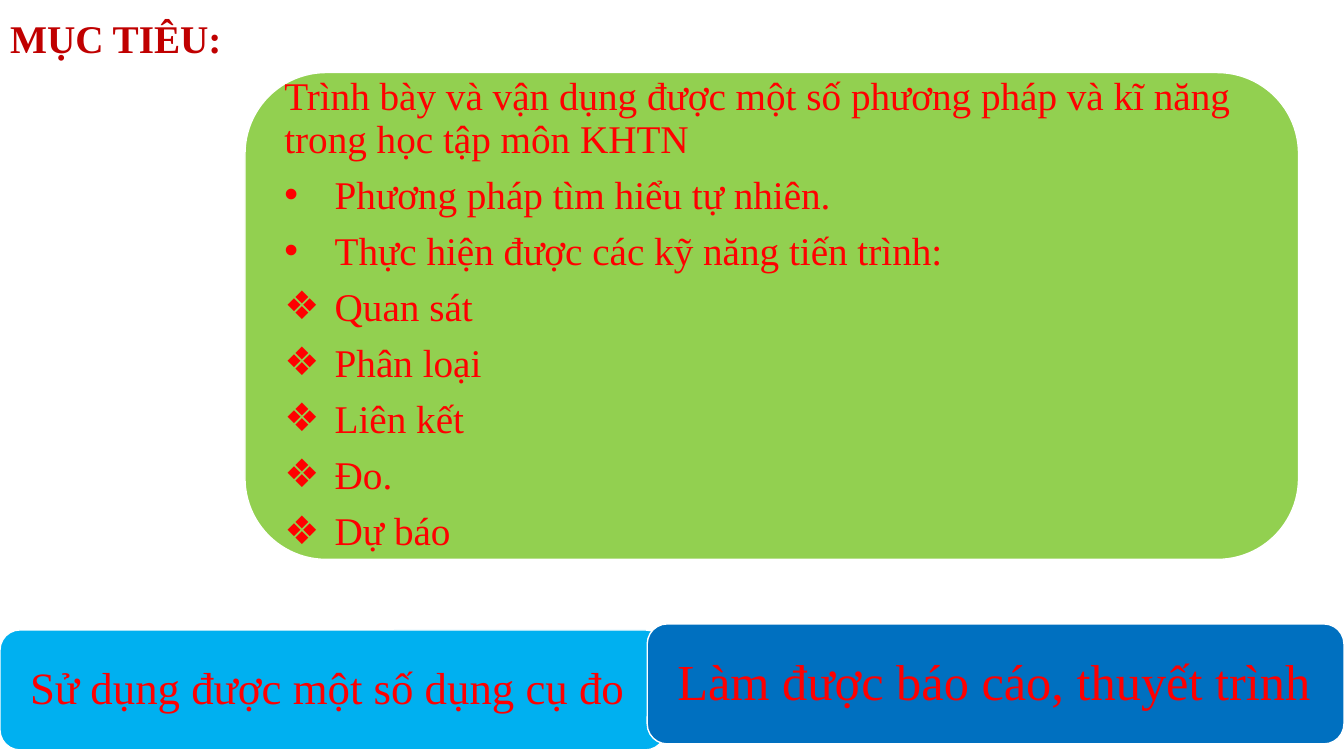
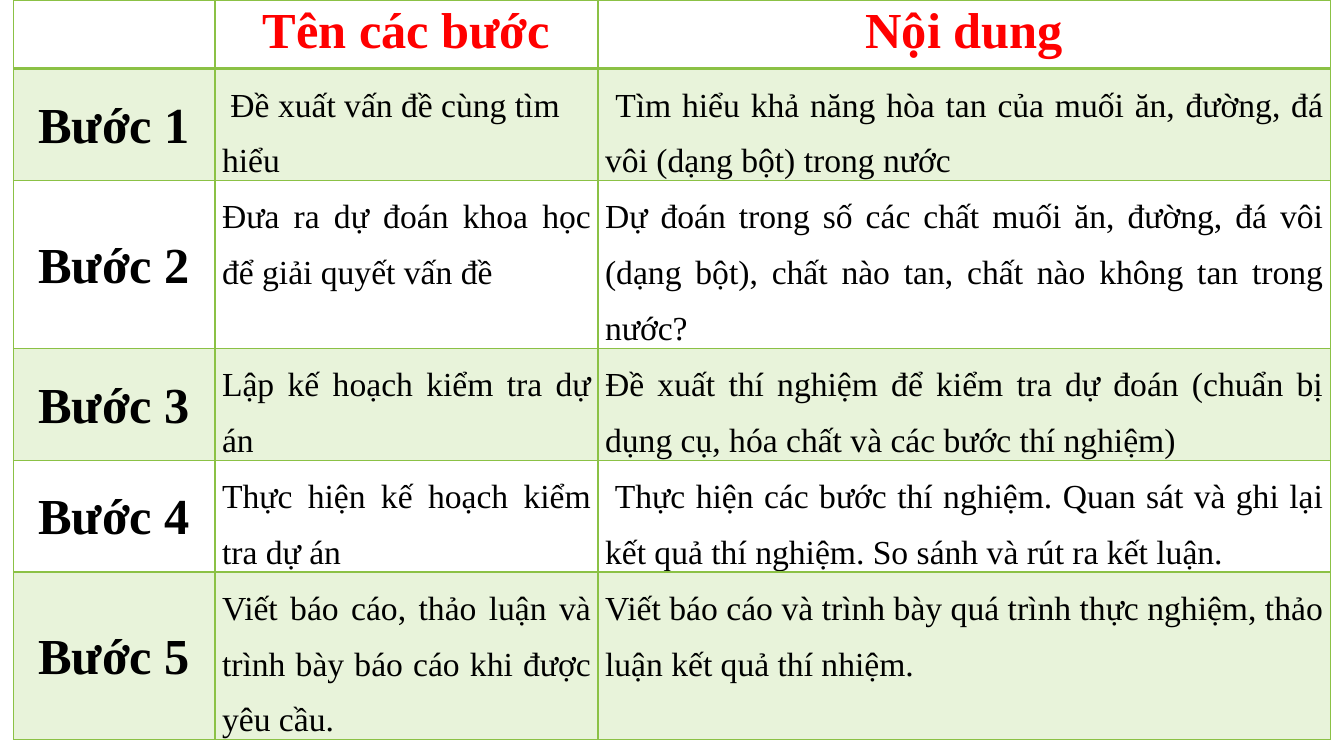
from dataclasses import dataclass

from lxml.etree import SubElement
from pptx import Presentation
from pptx.dml.color import RGBColor
from pptx.enum.shapes import MSO_SHAPE as Shape
from pptx.enum.text import MSO_ANCHOR as Anchor, MSO_AUTO_SIZE as AutoSize, PP_ALIGN as Align
from pptx.oxml.ns import qn
from pptx.util import Inches, Pt


@dataclass(frozen=True)
class Theme:
    font: str = "Times New Roman"
    white: str = "FFFFFF"
    black: str = "000000"
    heading: str = "C00000"
    accent: str = "FF0000"
    panel: str = "92D050"
    sky: str = "00B0F0"
    blue: str = "0070C0"
    rule: str = "8BC145"
    stripe: str = "E8F3DA"
    body_size: int = 28
    band_size: int = 32
    large_size: int = 36
    cell_size: int = 24


THEME = Theme()
TITLE_AND_BODY, BLANK = 1, 6
LIST_INDENT = Inches(0.5)


def set_bullet(para, mark):
    """Give a paragraph a hanging bullet, or none at all."""
    props = para._p.get_or_add_pPr()
    indent = LIST_INDENT if mark else 0
    props.set("marL", str(indent))
    props.set("indent", str(-indent))
    if mark:
        SubElement(props, qn("a:buFont"), typeface="Arial")
        SubElement(props, qn("a:buChar"), char=mark)
    else:
        SubElement(props, qn("a:buNone"))


def write_text(frame, lines, size, color, bold=False, align=Align.LEFT, spacing=1.0, after=0):
    """Fill a text frame with (bullet, text) lines of one format."""
    for index, (mark, text) in enumerate(lines):
        para = frame.add_paragraph() if index else frame.paragraphs[0]
        para.alignment, para.line_spacing = align, spacing
        para.space_before, para.space_after = Pt(0), Pt(after)
        set_bullet(para, mark)
        span = para.add_run()
        span.text = text
        font = span.font
        font.name, font.size, font.bold = THEME.font, Pt(size), bold
        font.color.rgb = RGBColor.from_string(color)


def set_frame(frame, anchor, side, edge):
    """Set the wrap, anchor and insets (inches) of a text frame."""
    frame.word_wrap, frame.auto_size = True, AutoSize.NONE
    frame.vertical_anchor = anchor
    frame.margin_left = frame.margin_right = Inches(side)
    frame.margin_top = frame.margin_bottom = Inches(edge)


def set_borders(cell, color, bottom):
    """Draw four cell borders, with a bottom line of its own width."""
    props = cell._tc.get_or_add_tcPr()
    widths = {"a:lnL": 1, "a:lnR": 1, "a:lnT": 1, "a:lnB": bottom}
    for place, (name, width) in enumerate(widths.items()):
        line = SubElement(props, qn(name), w=str(Pt(width)))
        props.insert(place, line)
        fill = SubElement(line, qn("a:solidFill"))
        SubElement(fill, qn("a:srgbClr"), val=color)


class SlideBuilder:
    """Places elements on a grid of 100 columns by 100 rows."""

    def __init__(self, deck):
        self.deck = deck
        self.page = None

    def columns(self, count):
        return round(self.deck.slide_width * count / 100)

    def rows(self, count):
        return round(self.deck.slide_height * count / 100)

    def area(self, left, top, width, height):
        return self.columns(left), self.rows(top), self.columns(width), self.rows(height)

    def start(self, layout):
        self.page = self.deck.slides.add_slide(self.deck.slide_layouts[layout])

    def place(self, box, area):
        box.left, box.top, box.width, box.height = self.area(*area)

    def title(self, text, area):
        box = self.page.shapes.title
        self.place(box, area)
        set_frame(box.text_frame, Anchor.TOP, 0.1, 0.05)
        write_text(box.text_frame, [(None, text)], THEME.body_size, THEME.heading, bold=True)

    def body(self, lines, area):
        box = self.page.placeholders[1]
        self.place(box, area)
        self.page.shapes._spTree.append(box._element)  # bring in front of the panel
        set_frame(box.text_frame, Anchor.MIDDLE, 0.24, 0)
        write_text(box.text_frame, lines, THEME.body_size, THEME.accent,
                   spacing=0.9, after=0.35 * THEME.body_size)

    def panel(self, area, color, text=None, size=THEME.band_size):
        box = self.page.shapes.add_shape(Shape.ROUNDED_RECTANGLE, *self.area(*area))
        box.shadow.inherit = False
        box.fill.solid()
        box.fill.fore_color.rgb = RGBColor.from_string(color)
        box.line.color.rgb = RGBColor.from_string(THEME.white)
        box.line.width = Pt(1)
        if text:
            set_frame(box.text_frame, Anchor.MIDDLE, 0.24, 0)
            write_text(box.text_frame, [(None, text)], size, THEME.accent, spacing=0.9)

    def cell(self, cell, text, striped=False, bottom=1, anchor=Anchor.TOP, **style):
        if striped:
            cell.fill.solid()
            cell.fill.fore_color.rgb = RGBColor.from_string(THEME.stripe)
        else:
            cell.fill.background()
        set_borders(cell, THEME.rule, bottom)
        cell.vertical_anchor = anchor
        cell.margin_left = cell.margin_right = Inches(0.07)
        cell.margin_top = cell.margin_bottom = 0
        if text:
            write_text(cell.text_frame, [(None, text)], **style)

    def table(self, header, steps, left, widths, heights):
        area = self.area(left, 0, sum(widths), sum(heights))
        table = self.page.shapes.add_table(len(heights), len(widths), *area).table
        table.first_row = table.horz_banding = False
        for column, width in zip(table.columns, widths):
            column.width = self.columns(width)
        for row, height in zip(table.rows, heights):
            row.height = self.rows(height)

        label = dict(size=THEME.large_size, bold=True, align=Align.CENTER, spacing=1.07)
        prose = dict(size=THEME.cell_size, color=THEME.black, spacing=1.5)
        for index, text in enumerate(header):
            self.cell(table.cell(0, index), text, bottom=2, color=THEME.accent, **label)
        for number, (name, content) in enumerate(steps, start=1):
            striped = number % 2 == 1
            self.cell(table.cell(number, 0), f"Bước {number}", striped, anchor=Anchor.MIDDLE,
                      color=THEME.black, **label)
            name_align = Align.LEFT if number == 1 else Align.JUSTIFY
            self.cell(table.cell(number, 1), name, striped, align=name_align, **prose)
            self.cell(table.cell(number, 2), content, striped, align=Align.JUSTIFY, **prose)


GOALS = [
    (None, "Trình bày và vận dụng được một số phương pháp và kĩ năng trong học tập môn KHTN"),
    ("•", "Phương pháp tìm hiểu tự nhiên."),
    ("•", "Thực hiện được các kỹ năng tiến trình:"),
] + [("❖", skill) for skill in ("Quan sát", "Phân loại", "Liên kết", "Đo.", "Dự báo")]

HEADER = ("", "Tên các bước", "Nội dung")
STEPS = [
    (" Đề xuất vấn đề cùng tìm hiểu",
     " Tìm hiểu khả năng hòa tan của muối ăn, đường, đá vôi (dạng bột) trong nước"),
    ("Đưa ra dự đoán khoa học để giải quyết vấn đề",
     "Dự đoán trong số các chất muối ăn, đường, đá vôi (dạng bột), "
     "chất nào tan, chất nào không tan trong nước?"),
    ("Lập kế hoạch kiểm tra dự án",
     "Đề xuất thí nghiệm để kiểm tra dự đoán (chuẩn bị dụng cụ, hóa chất "
     "và các bước thí nghiệm)"),
    ("Thực hiện kế hoạch kiểm tra dự án",
     " Thực hiện các bước thí nghiệm. Quan sát và ghi lại kết quả thí nghiệm. "
     "So sánh và rút ra kết luận."),
    ("Viết báo cáo, thảo luận và trình bày báo cáo khi được yêu cầu.",
     "Viết báo cáo và trình bày quá trình thực nghiệm, thảo luận kết quả thí nhiệm."),
]


def main():
    deck = Presentation()
    deck.slide_width, deck.slide_height = Inches(13.33), Inches(7.5)
    builder = SlideBuilder(deck)

    # Goals
    builder.start(TITLE_AND_BODY)
    builder.title("MỤC TIÊU:", (0, 1.2, 19.2, 7.6))
    builder.panel((18.23, 9.6, 78.39, 64.4), THEME.panel)
    builder.body(GOALS, (19.35, 12.67, 76.14, 58.13))
    builder.panel((0, 83.33, 49.51, 15.87), THEME.sky, "Sử dụng được một số dụng cụ đo")
    builder.panel((48.16, 82.53, 51.84, 15.87), THEME.blue,
                  "Làm được báo cáo, thuyết trình", THEME.large_size)

    # Steps: rows of two or three text lines
    two_lines, three_lines = 14.8, 22.2
    builder.start(BLANK)
    builder.table(HEADER, STEPS, left=1, widths=(15, 28.5, 54.5),
                  heights=(9.07, two_lines, three_lines, two_lines, two_lines, three_lines))

    deck.save("out.pptx")


if __name__ == "__main__":
    main()
